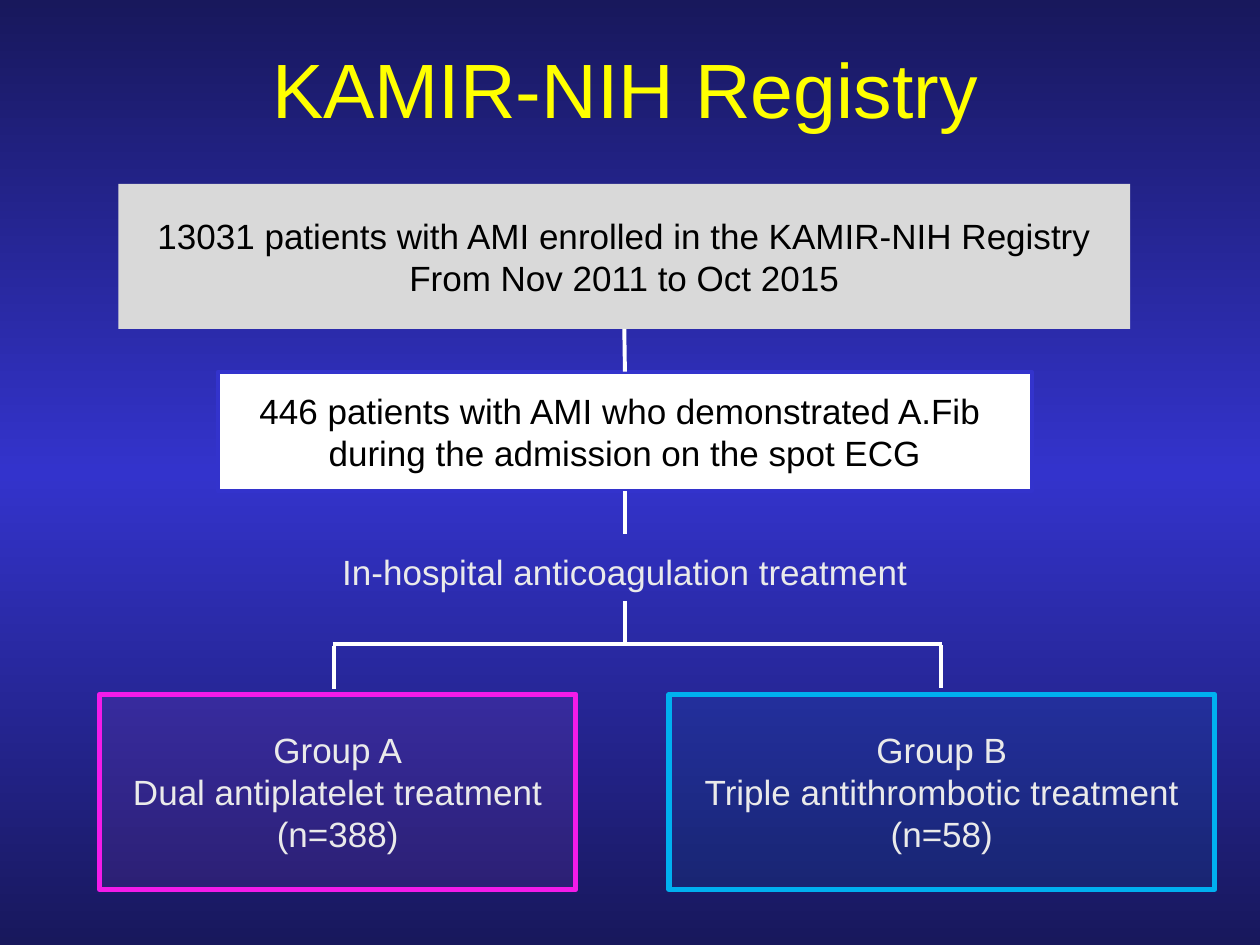
from copy import deepcopy
from dataclasses import dataclass
from typing import Optional

from lxml import etree
from pptx import Presentation
from pptx import util as u
from pptx.dml.color import RGBColor
from pptx.enum import shapes, text
from pptx.oxml import ns

WHITE, BLACK, PALE = "FFFFFF", "000000", "EAEAEA"
MID = 4.96  # centre line of the flow


@dataclass
class Box:
    left: float
    top: float
    width: float
    height: float
    lines: list[str]
    ink: str
    fill: Optional[str] = None
    alpha: int = 100
    edge: Optional[str] = None
    weight: float = 0
    size: int = 20
    space: float = 1.0
    glow: bool = False


@dataclass
class Link:
    x1: float
    y1: float
    x2: float
    y2: float
    start: Optional[str] = None
    end: Optional[str] = None


def rgb(code: str) -> RGBColor:
    return RGBColor.from_string(code)


def sub(node, tag: str, **attrs: str):
    return etree.SubElement(node, ns.qn(tag), attrs)


def paint(slide) -> None:
    """Fill the background with a dark-bright-dark vertical gradient."""
    fill = slide.background.fill
    fill.gradient()
    fill.gradient_angle = 90
    last = fill.gradient_stops[1]._gs
    last.addnext(deepcopy(last))
    for stop, code, pos in zip(fill.gradient_stops, ("18185C", "3333CC", "18185C"), (0, 0.5, 1)):
        stop.color.rgb = rgb(code)
        stop.position = pos


def shade(run) -> None:
    """Give a run a soft drop shadow."""
    fill = run.font._element.find(ns.qn("a:solidFill"))
    fx = etree.Element(ns.qn("a:effectLst"))
    drop = sub(fx, "a:outerShdw", blurRad="38100", dist="38100", dir="2700000", algn="tl")
    tint = sub(drop, "a:srgbClr", val=BLACK)
    sub(tint, "a:alpha", val="43000")
    fill.addnext(fx)


def write(frame, box: Box) -> None:
    frame.word_wrap = True
    frame.vertical_anchor = text.MSO_ANCHOR.MIDDLE
    for i, line in enumerate(box.lines):
        para = frame.add_paragraph() if i else frame.paragraphs[0]
        para.alignment = text.PP_ALIGN.CENTER
        para.line_spacing = box.space
        run = para.add_run()
        run.text = line
        run.font.size = u.Pt(box.size)
        run.font.color.rgb = rgb(box.ink)
        run.font.name = "Arial"
        if box.glow:
            shade(run)


def draw(slide, box: Box):
    area = [u.Inches(n) for n in (box.left, box.top, box.width, box.height)]
    if box.fill is None:
        shape = slide.shapes.add_textbox(*area)
    else:
        shape = slide.shapes.add_shape(shapes.MSO_SHAPE.RECTANGLE, *area)
        shape.shadow.inherit = False
        shape.fill.solid()
        shape.fill.fore_color.rgb = rgb(box.fill)
        if box.alpha < 100:
            tint = shape._element.spPr.find(ns.qn("a:solidFill"))[0]
            sub(tint, "a:alpha", val=str(box.alpha * 1000))
        if box.edge:
            shape.line.color.rgb = rgb(box.edge)
            shape.line.width = u.Pt(box.weight)
            sub(shape.line._get_or_add_ln(), "a:round")
        else:
            shape.line.fill.background()
    write(shape.text_frame, box)
    return shape


def join(slide, link: Link, drawn: dict) -> None:
    ends = [u.Inches(n) for n in (link.x1, link.y1, link.x2, link.y2)]
    line = slide.shapes.add_connector(shapes.MSO_CONNECTOR.STRAIGHT, *ends)
    line.line.color.rgb = rgb(WHITE)
    line.line.width = u.Pt(2.25)
    sub(line._element.spPr, "a:effectLst")
    if link.start:
        line.begin_connect(drawn[link.start], 2)
    if link.end:
        line.end_connect(drawn[link.end], 0)


BOXES = {
    "all": Box(0.94, 1.46, 8.03, 1.15,
               ["13031 patients with AMI enrolled in the KAMIR-NIH Registry",
                "From Nov 2011 to Oct 2015"], BLACK, "D9D9D9"),
    "afib": Box(1.73, 2.95, 6.46, 0.95,
                ["446 patients with AMI who demonstrated A.Fib ",
                 "during the admission on the spot ECG"],
                BLACK, WHITE, edge="3333CC", weight=2.25),
    "care": Box(1.18, 4.14, 7.56, 0.63, ["In-hospital anticoagulation treatment"],
                PALE, space=1.5, glow=True),
    "dual": Box(0.79, 5.51, 3.78, 1.55,
                ["Group A", "Dual antiplatelet treatment", "(n=388)"],
                PALE, "FF66FF", 8, "F31BE9", 3),
    "triple": Box(5.31, 5.51, 4.33, 1.55,
                  ["Group B", "Triple antithrombotic treatment", "(n=58)"],
                  PALE, "00B0F0", 7, "00B0F0", 3),
    "title": Box(0.4, 0.25, 9.13, 0.89, ["KAMIR-NIH Registry"], "FFFF00", size=44),
}

LINKS = [
    # Trunk
    Link(MID, 2.61, MID, 2.95, "all", "afib"),
    Link(MID, 3.9, MID, 4.24, "afib"),
    Link(MID, 4.77, MID, 5.11, "care"),
    # Fork to the two groups
    Link(2.64, 5.11, 7.48, 5.11),
    Link(2.65, 5.13, 2.65, 5.47),
    Link(7.47, 5.12, 7.47, 5.46),
]


def main() -> None:
    deck = Presentation()
    deck.slide_width, deck.slide_height = u.Inches(10), u.Inches(7.5)
    slide = deck.slides.add_slide(deck.slide_layouts[6])
    paint(slide)
    drawn = {name: draw(slide, box) for name, box in BOXES.items()}
    for link in LINKS:
        join(slide, link, drawn)
    deck.save("out.pptx")


if __name__ == "__main__":
    main()
